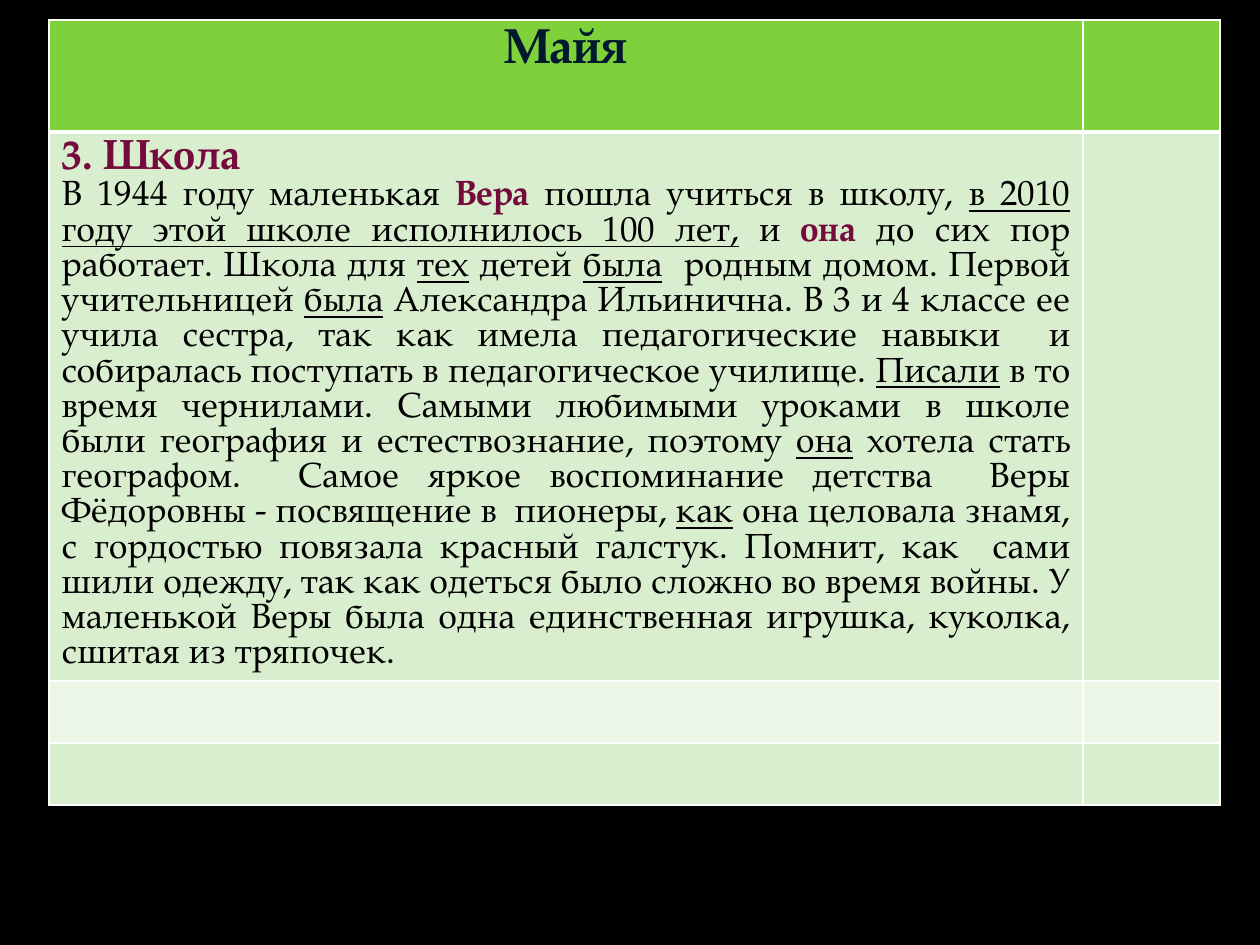
from lxml.etree import SubElement
from pptx import Presentation
from pptx.dml.color import RGBColor
from pptx.enum.text import PP_ALIGN
from pptx.oxml.ns import qn
from pptx.util import Pt

PX = 914400 // 126
FONT = "TeX Gyre Pagella"
BLACK = RGBColor(0x00, 0x00, 0x00)
WHITE = RGBColor(0xFF, 0xFF, 0xFF)
NAVY = RGBColor(0x00, 0x19, 0x2F)
WINE = RGBColor(0x75, 0x0B, 0x3D)
GREEN = RGBColor(0x7F, 0xD1, 0x3B)
LIGHT = RGBColor(0xD8, 0xEE, 0xCE)
PALE = RGBColor(0xEC, 0xF7, 0xE8)

COLS = [1034, 137]
ROWS = [112, 549, 62, 62]
FILLS = [GREEN, LIGHT, PALE, LIGHT]

STORY = [
    ("В 1944 году маленькая ", ""),
    ("Вера", "bold"),
    (" пошла учиться в школу, ", ""),
    ("в 2010 году этой школе исполнилось 100 лет,", "line"),
    (" и ", ""),
    ("она", "bold"),
    (" до сих пор работает. Школа для ", ""),
    ("тех", "line"),
    (" детей ", ""),
    ("была", "line"),
    ("  родным домом. Первой учительницей ", ""),
    ("была", "line"),
    (" Александра Ильинична. В 3 и 4 классе ее учила сестра, так как имела "
     "педагогические навыки  и собиралась поступать в педагогическое училище. ", ""),
    ("Писали", "line"),
    (" в то время чернилами. Самыми любимыми уроками в школе были география "
     "и естествознание, поэтому ", ""),
    ("она", "line"),
    (" хотела стать географом.  Самое яркое воспоминание детства  Веры "
     "Фёдоровны - посвящение в  пионеры, ", ""),
    ("как", "line"),
    (" она целовала знамя, с гордостью повязала красный галстук. Помнит, как  "
     "сами шили одежду, так как одеться было сложно во время войны. У маленькой "
     "Веры была одна единственная игрушка, куколка, сшитая из тряпочек.", ""),
]


def set_border(cell, side, width):
    tcPr = cell._tc.get_or_add_tcPr()
    ln = SubElement(tcPr, qn(f"a:ln{side}"), w=str(Pt(width)))
    fill = SubElement(ln, qn("a:solidFill"))
    SubElement(fill, qn("a:srgbClr"), val=str(WHITE))


def format_paragraph(p, size, spacing, align):
    p.alignment = align
    p.line_spacing = Pt(spacing)
    p.font.name = FONT
    p.font.size = Pt(size)


prs = Presentation()
prs.slide_width = 1260 * PX
prs.slide_height = 945 * PX
s = prs.slides.add_slide(prs.slide_layouts[6])
s.background.fill.solid()
s.background.fill.fore_color.rgb = BLACK

table = s.shapes.add_table(
    len(ROWS), len(COLS), 49 * PX, 20 * PX, sum(COLS) * PX, sum(ROWS) * PX
).table
for col, width in zip(table.columns, COLS):
    col.width = width * PX
for i, (row, height) in enumerate(zip(table.rows, ROWS)):
    row.height = height * PX
    for cell in row.cells:
        set_border(cell, "L", 1)
        set_border(cell, "R", 1)
        set_border(cell, "T", 3 if i == 1 else 1)
        set_border(cell, "B", 3 if i == 0 else 1)
        cell.fill.solid()
        cell.fill.fore_color.rgb = FILLS[i]

p = table.cell(0, 0).text_frame.paragraphs[0]
p.text = "Майя"
format_paragraph(p, 28, 28.2, PP_ALIGN.CENTER)
p.font.bold = True
p.font.color.rgb = NAVY

tf = table.cell(1, 0).text_frame
p = tf.paragraphs[0]
p.text = "3. Школа"
format_paragraph(p, 24, 24.2, PP_ALIGN.JUSTIFY)
p.font.bold = True
p.font.color.rgb = WINE

p = tf.add_paragraph()
format_paragraph(p, 20, 20.15, PP_ALIGN.JUSTIFY)
for text, style in STORY:
    r = p.add_run()
    r.text = text
    r.font.name = FONT
    r.font.size = Pt(20)
    r.font.bold = style == "bold"
    r.font.underline = style == "line"
    r.font.color.rgb = WINE if style == "bold" else BLACK

prs.save("out.pptx")
